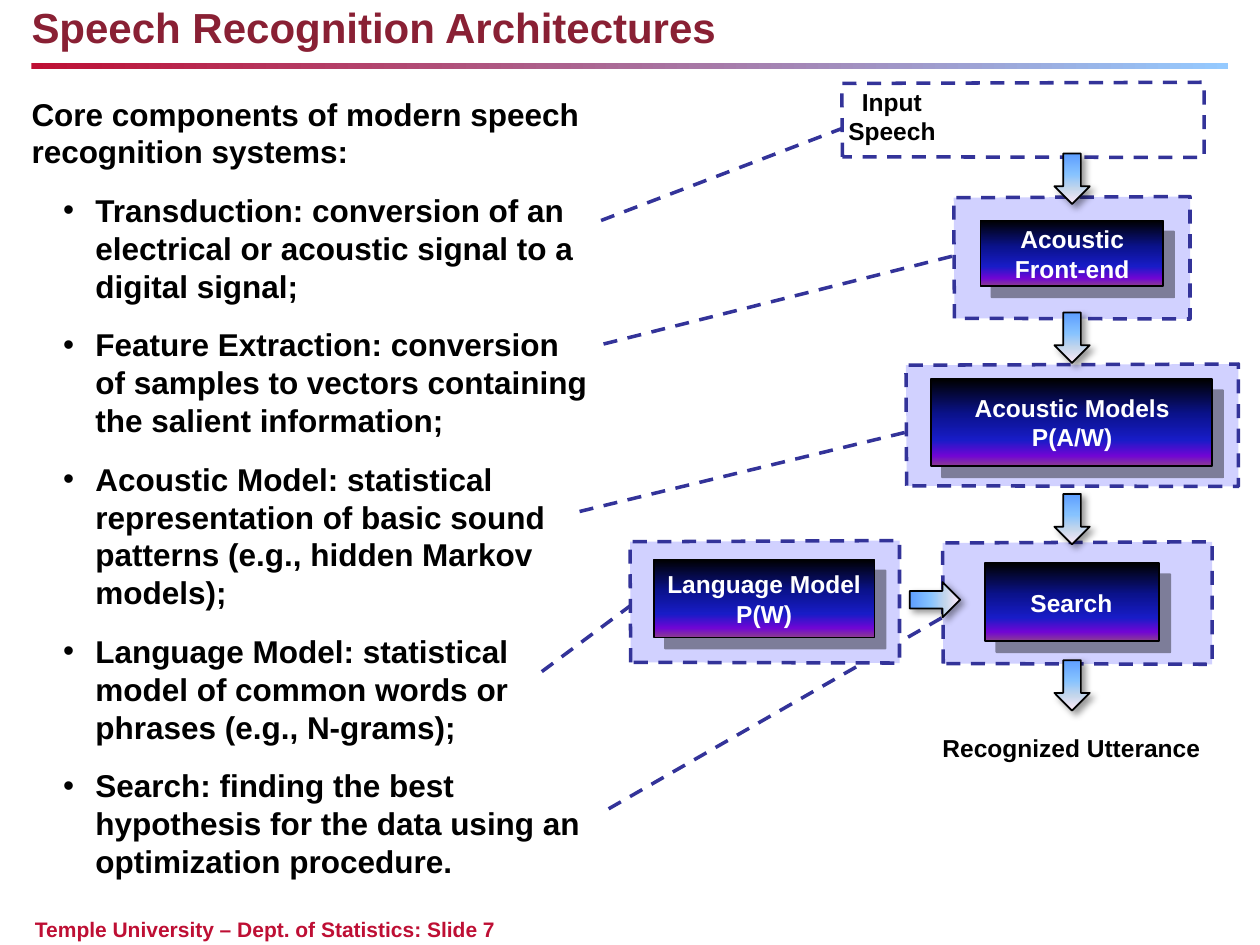
from dataclasses import dataclass
from lxml.etree import SubElement
from pptx import Presentation
from pptx.dml.color import RGBColor
from pptx.enum.dml import MSO_LINE
from pptx.enum.shapes import MSO_CONNECTOR, MSO_SHAPE
from pptx.enum.text import MSO_ANCHOR as ANCHOR, MSO_AUTO_SIZE as AUTO, PP_ALIGN as ALIGN
from pptx.oxml.ns import qn
from pptx.util import Pt


@dataclass(frozen=True)
class Theme:
    font: str = "Arial"
    title: str = "892034"
    footer: str = "BE0F34"
    text: str = "000000"
    inverse: str = "FFFFFF"
    dash: str = "333399"
    panel: str = "D1D1FF"
    rule: tuple = ((0, "BE0F34"), (100, "95CAFF"))
    block: tuple = ((0, "000000"), (40, "0A128C"), (70, "181CC7"),
                    (88, "7005D4"), (100, "8C3D91"))
    arrow: tuple = ((0, "5E9EFF"), (40, "85C2FF"), (70, "C4D6EB"), (100, "FFEBFA"))
    title_size: int = 24
    body_size: int = 18
    label_size: int = 14
    footer_size: int = 12


theme = Theme()


def style_text(frame, size, color, align=ALIGN.LEFT):
    """Give a text frame no margins and one bold font."""
    frame.margin_left = frame.margin_top = frame.margin_right = frame.margin_bottom = 0
    frame.word_wrap = True
    frame.auto_size = AUTO.NONE
    frame.vertical_anchor = ANCHOR.TOP
    for para in frame.paragraphs:
        para.alignment = align
        para.space_before = Pt(0)
        for span in para.runs:
            span.font.name = theme.font
            span.font.size = Pt(size)
            span.font.bold = True
            span.font.color.rgb = RGBColor.from_string(color)


def style_shape(shape, stops, angle, shadow=None):
    """Fill with a gradient; shadow is (blur, distance) and brings a black outline."""
    shape.fill.gradient()
    shape.fill.gradient_angle = -angle % 360
    stop_list = shape.element.spPr.find(qn("a:gradFill")).find(qn("a:gsLst"))
    for old_stop in list(stop_list):
        stop_list.remove(old_stop)
    for position, color in stops:
        stop = SubElement(stop_list, qn("a:gs"), pos=str(position * 1000))
        SubElement(stop, qn("a:srgbClr"), val=color)
    shape.shadow.inherit = False
    if shadow is None:
        shape.line.fill.background()
        return
    shape.line.color.rgb = RGBColor.from_string(theme.text)
    shape.line.width = Pt(1)
    blur, distance = shadow
    effects = shape.element.spPr.find(qn("a:effectLst"))
    outer = SubElement(effects, qn("a:outerShdw"), blurRad=str(Pt(blur)),
                       dist=str(Pt(distance)), dir="2700000", algn="ctr", rotWithShape="0")
    shade = SubElement(outer, qn("a:srgbClr"), val=theme.text)
    SubElement(shade, qn("a:alpha"), val="40000")


deck = Presentation()
deck.slide_width, deck.slide_height = Pt(720), Pt(540)
page = deck.slides.add_slide(deck.slide_layouts[1])
shapes = page.shapes

# Title and rule
title = shapes.title
title.left, title.top, title.width, title.height = Pt(18), Pt(4.3), Pt(540), Pt(26)
title.text_frame.text = "Speech Recognition Architectures"
style_text(title.text_frame, theme.title_size, theme.title)
title.text_frame.paragraphs[0].line_spacing = 0.9

rule = shapes.add_shape(MSO_SHAPE.RECTANGLE, Pt(18), Pt(36), Pt(684), Pt(3.6))
style_shape(rule, theme.rule, 0)

# Component list
body = page.placeholders[1]
body.left, body.top, body.width, body.height = Pt(18), Pt(54), Pt(318.5), Pt(451.5)
body.text_frame.text = "\n".join([
    "Core components of modern speech recognition systems:",
    "Transduction: conversion of an electrical or acoustic signal to a digital signal;",
    "Feature Extraction: conversion of samples to vectors containing the salient information;",
    "Acoustic Model: statistical representation of basic sound patterns "
    "(e.g., hidden Markov models);",
    "Language Model: statistical model of common words or phrases (e.g., N-grams);",
    "Search: finding the best hypothesis for the data using an optimization procedure.",
])
for index, para in enumerate(body.text_frame.paragraphs):
    props = para._p.get_or_add_pPr()
    props.set("marL", str(Pt(36.5) if index else 0))
    props.set("indent", str(-Pt(18.5) if index else 0))
    if index:
        SubElement(props, qn("a:buChar"), char="•")
    else:
        SubElement(props, qn("a:buNone"))
    para.space_after = Pt(12)
style_text(body.text_frame, theme.body_size, theme.text)

# Dashed panels, each tied to its list item: left, top, width, height, fill, line start, line end y
panels = [
    (481, 47, 207, 43, None, (343.5, 126), 73.5),
    (538.6, 309.6, 154, 70, theme.panel, (347.8, 462.2), 352.8),
    (360, 308.9, 154, 70, theme.panel, (309.6, 383.8), 346.3),
    (517.7, 208, 190, 70, theme.panel, (331.2, 292.3), 247),
    (545, 112.3, 135, 70, theme.panel, (344.9, 196.6), 146.2),
]
for left, top, width, height, fill, (start_x, start_y), end_y in panels:
    right, bottom = left + width, top + height
    outline = shapes.build_freeform(Pt(left + 0.4), Pt(bottom - 0.4))
    outline.add_line_segments([(Pt(left), Pt(top + 0.7)), (Pt(right), Pt(top)),
                               (Pt(right), Pt(bottom))], close=True)
    panel = outline.convert_to_shape()
    panel.shadow.inherit = False
    if fill:
        panel.fill.solid()
        panel.fill.fore_color.rgb = RGBColor.from_string(fill)
    else:
        panel.fill.background()
    link = shapes.add_connector(MSO_CONNECTOR.STRAIGHT, Pt(start_x), Pt(start_y),
                                Pt(left), Pt(end_y))
    SubElement(link.element.spPr, qn("a:effectLst"))
    for part in (panel, link):
        part.line.color.rgb = RGBColor.from_string(theme.dash)
        part.line.width = Pt(2)
        part.line.dash_style = MSO_LINE.DASH

# Processing blocks
for left, top, width, height in [
    (560.2, 126, 104.4, 37.5),
    (532, 216.7, 160.6, 49.7),
    (373.7, 319.7, 126, 44.6),
    (563, 321.8, 99.4, 44.6),
]:
    block = shapes.add_shape(MSO_SHAPE.RECTANGLE, Pt(left), Pt(top), Pt(width), Pt(height))
    style_shape(block, theme.block, 90, shadow=(0, 9))

# Labels
for text, left, top, width, height, color in [
    ("Acoustic\vFront-end", 559.4, 128.2, 106.6, 34, theme.inverse),
    ("Acoustic Models\vP(A/W)", 532.8, 224.6, 159.8, 34, theme.inverse),
    ("Language Model\vP(W)", 370.8, 325.4, 131.8, 34, theme.inverse),
    ("Search", 566.6, 336.2, 91.4, 17, theme.inverse),
    ("Input\vSpeech", 458.6, 49.7, 102.2, 34, theme.text),
    ("Recognized Utterance", 512.6, 419, 199.4, 17, theme.text),
]:
    label = shapes.add_textbox(Pt(left), Pt(top), Pt(width), Pt(height))
    label.text_frame.text = text
    style_text(label.text_frame, theme.label_size, color, ALIGN.CENTER)

# Flow arrows
for left, top, rotation in [(602.5, 87.8, 0), (602.5, 178.6, 0), (602.5, 282.3, 0),
                            (524.2, 328.3, 270), (602.5, 377.3, 0)]:
    arrow = shapes.add_shape(MSO_SHAPE.DOWN_ARROW, Pt(left), Pt(top), Pt(20.2), Pt(28.8))
    arrow.rotation = rotation
    style_shape(arrow, theme.arrow, 90, shadow=(4, 3))

# Footer
footer = shapes.add_textbox(Pt(20), Pt(523.5), Pt(642), Pt(14.5))
footer.text_frame.text = "Temple University – Dept. of Statistics: Slide 7"
style_text(footer.text_frame, theme.footer_size, theme.footer)

deck.save("out.pptx")
